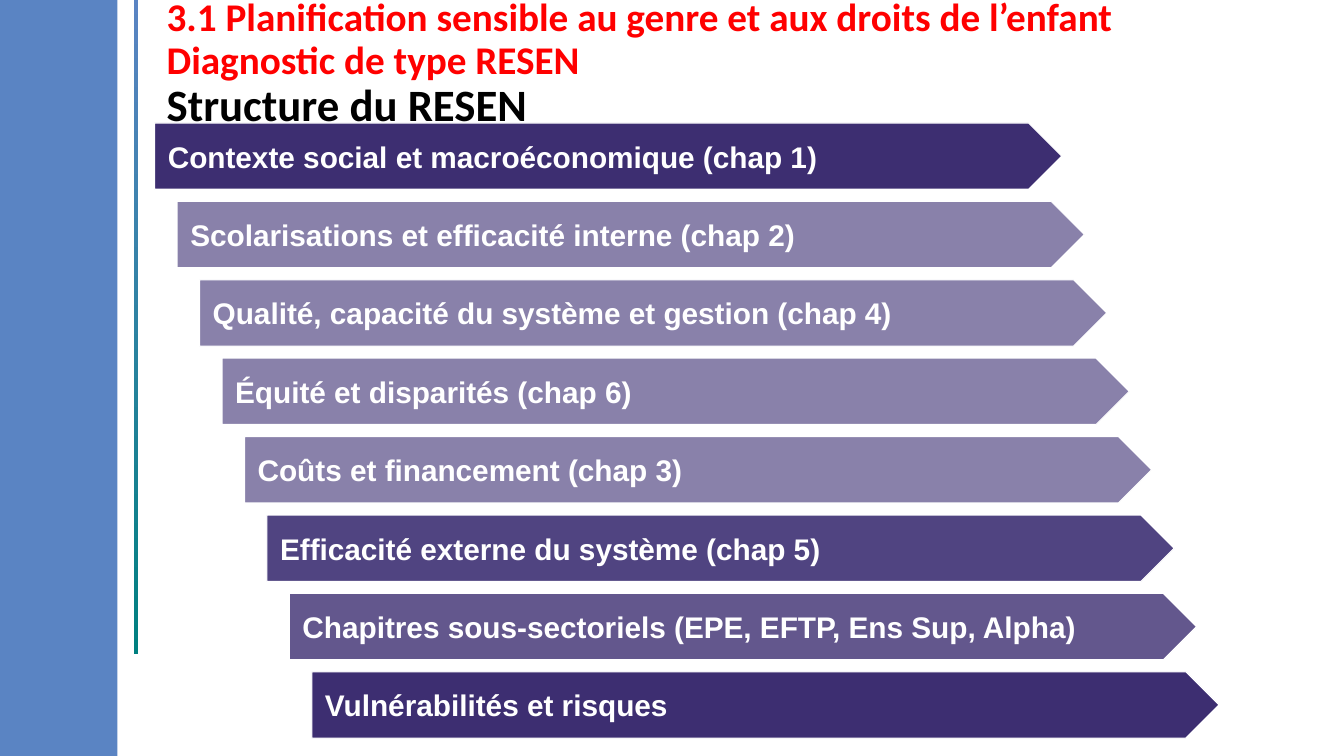
from pptx import Presentation
from pptx.dml.color import RGBColor
from pptx.enum.shapes import MSO_SHAPE
from pptx.enum.text import MSO_ANCHOR, PP_ALIGN
from pptx.oxml.ns import qn
from pptx.util import Cm, Pt
from lxml import etree

RECTANGLE, PENTAGON = MSO_SHAPE.RECTANGLE, MSO_SHAPE.PENTAGON
TOP, MIDDLE = MSO_ANCHOR.TOP, MSO_ANCHOR.MIDDLE
LEFT = PP_ALIGN.LEFT

THEME = {
    "band": "5A84C3", "teal": "008080", "white": "FFFFFF",
    "red": "FF0000", "black": "000000",
    "dark": "3D2E71", "violet": "504481",
    "title_font": "Calibri", "chapter_font": "Arial",
    "title_size": 28, "subtitle_size": 32, "chapter_size": 21.3,
}

# Content: text, colour, size
HEADING = [
    ("3.1 Planification sensible au genre et aux droits de l’enfant", "red", "title_size"),
    ("Diagnostic de type RESEN", "red", "title_size"),
    ("Structure du RESEN", "black", "subtitle_size"),
]
# Content: text, colour, opacity in percent
CHAPTERS = [
    ("Contexte social et macroéconomique (chap 1)", "dark", 100),
    ("Scolarisations et efficacité interne (chap 2)", "violet", 67),
    ("Qualité, capacité du système et gestion (chap 4)", "violet", 67),
    ("Équité et disparités (chap 6)", "violet", 67),
    ("Coûts et financement (chap 3)", "violet", 67),
    ("Efficacité externe du système (chap 5)", "violet", 100),
    ("Chapitres sous-sectoriels (EPE, EFTP, Ens Sup, Alpha)", "dark", 80),
    ("Vulnérabilités et risques", "dark", 100),
]

# Layout in centimetres
SLIDE_WIDTH, SLIDE_HEIGHT = 33.87, 19.05
FIRST_LEFT, LAST_LEFT = 3.9, 7.86
FIRST_TOP, LAST_TOP = 3.1, 16.93
CHAPTER_WIDTH, CHAPTER_HEIGHT = 22.86, 1.67


def color(name):
    return RGBColor.from_string(THEME[name])


def add_plain_shape(slide, kind, left, top, width, height):
    shape = slide.shapes.add_shape(kind, Cm(left), Cm(top), Cm(width), Cm(height))
    shape.shadow.inherit = False
    shape.line.fill.background()
    return shape


def fill_shape(shape, color_name, opacity=100):
    shape.fill.solid()
    shape.fill.fore_color.rgb = color(color_name)
    if opacity < 100:
        rgb = shape.fill._xPr.find(qn("a:solidFill"))[0]
        etree.SubElement(rgb, qn("a:alpha")).set("val", str(opacity * 1000))


def set_frame(frame, margin, anchor):
    frame.word_wrap = True
    frame.vertical_anchor = anchor
    frame.margin_left = frame.margin_right = Cm(margin)
    frame.margin_top = frame.margin_bottom = Cm(margin)


def add_bold_run(paragraph, text, font, size, color_name):
    run = paragraph.add_run()
    run.text = text
    run.font.name = THEME[font]
    run.font.size = Pt(THEME[size])
    run.font.bold = True
    run.font.color.rgb = color(color_name)


def add_side_decor(slide):
    band = add_plain_shape(slide, RECTANGLE, 0, 0, 2.96, SLIDE_HEIGHT)
    fill_shape(band, "band")
    rule = add_plain_shape(slide, RECTANGLE, 3.37, 0, 0.12, 16.48)
    rule.fill.gradient()
    rule.fill.gradient_angle = 90
    for stop, name in zip(rule.fill.gradient_stops, ("teal", "band")):
        stop.color.rgb = color(name)


def add_heading(slide):
    box = slide.shapes.add_textbox(Cm(4.2), Cm(-0.05), Cm(29.67), Cm(3.38))
    set_frame(box.text_frame, 0, TOP)
    paragraph = box.text_frame.paragraphs[0]
    paragraph.line_spacing = 0.9
    for index, (text, color_name, size) in enumerate(HEADING):
        if index:
            paragraph.add_line_break()
        add_bold_run(paragraph, text, "title_font", size, color_name)


def add_chapters(slide):
    steps = len(CHAPTERS) - 1
    for index, (text, color_name, opacity) in enumerate(CHAPTERS):
        left = FIRST_LEFT + index * (LAST_LEFT - FIRST_LEFT) / steps
        top = FIRST_TOP + index * (LAST_TOP - FIRST_TOP) / steps
        arrow = add_plain_shape(slide, PENTAGON, left, top, CHAPTER_WIDTH, CHAPTER_HEIGHT)
        arrow.adjustments[0] = 0.5
        fill_shape(arrow, color_name, opacity)
        arrow.line.color.rgb = color("white")
        arrow.line.width = Pt(0.75)
        set_frame(arrow.text_frame, 0.33, MIDDLE)
        paragraph = arrow.text_frame.paragraphs[0]
        paragraph.alignment = LEFT
        add_bold_run(paragraph, text, "chapter_font", "chapter_size", "white")


def main():
    deck = Presentation()
    deck.slide_width, deck.slide_height = Cm(SLIDE_WIDTH), Cm(SLIDE_HEIGHT)
    slide = deck.slides.add_slide(deck.slide_layouts[6])
    add_side_decor(slide)
    add_heading(slide)
    add_chapters(slide)
    deck.save("out.pptx")


if __name__ == "__main__":
    main()
